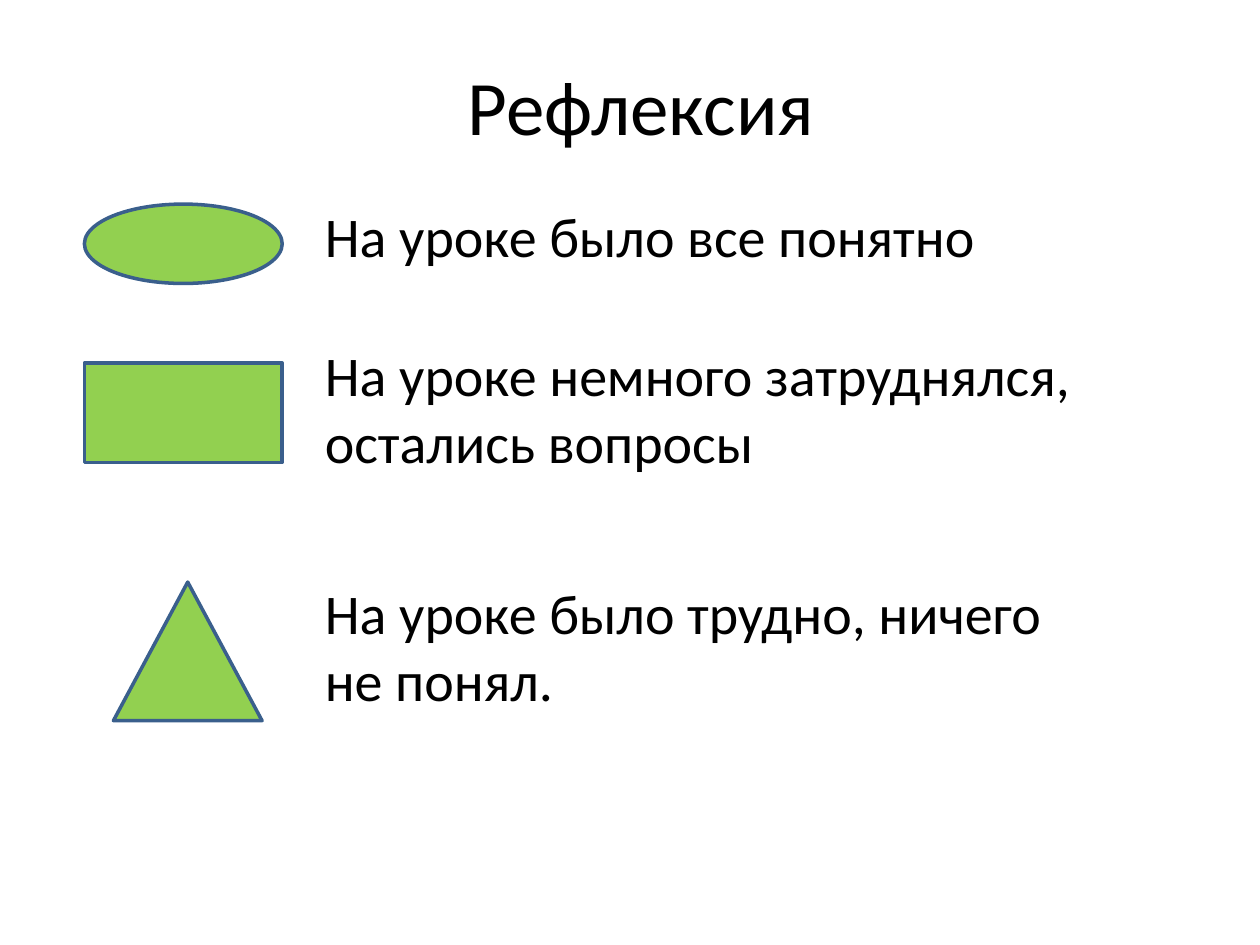
from dataclasses import dataclass

from pptx import Presentation
from pptx.dml.color import RGBColor
from pptx.enum.shapes import MSO_SHAPE as Preset
from pptx.enum.text import MSO_ANCHOR as Anchor, PP_ALIGN as Align
from pptx.slide import Slide
from pptx.text.text import TextFrame
from pptx.util import Inches, Pt

BLACK, GREEN, BLUE = "000000", "92D050", "3A5F8C"
ANSWER_LEFT, ANSWER_WIDTH = 2.48, 6.14


@dataclass(frozen=True)
class Answer:
    """A mark and the answer it stands for; boxes are in inches."""
    mark: Preset
    mark_box: tuple[float, float, float, float]
    wording: str
    top: float
    height: float


ANSWERS = [
    Answer(Preset.OVAL, (0.67, 1.62, 1.57, 0.63),
           "На уроке было все понятно", 1.55, 0.64),
    Answer(Preset.RECTANGLE, (0.67, 2.88, 1.57, 0.79),
           "На уроке немного затруднялся, остались вопросы", 2.65, 1.18),
    Answer(Preset.ISOSCELES_TRIANGLE, (0.9, 4.62, 1.18, 1.1),
           "На уроке было трудно, ничего не понял.", 4.54, 1.18),
]


def color(value: str) -> RGBColor:
    return RGBColor.from_string(value)


def write(frame: TextFrame, wording: str, *, size: float = 32,
          align: Align = Align.LEFT, anchor: Anchor = Anchor.TOP) -> None:
    frame.word_wrap = True
    frame.vertical_anchor = anchor
    paragraph = frame.paragraphs[0]
    paragraph.alignment = align
    run = paragraph.add_run()
    run.text = wording
    run.font.name = "Calibri"
    run.font.size = Pt(size)
    run.font.color.rgb = color(BLACK)


def add_title(slide: Slide, wording: str) -> None:
    title = slide.shapes.title
    title.left, title.top = Inches(0.59), Inches(0.21)
    title.width, title.height = Inches(9), Inches(1.25)
    write(title.text_frame, wording, size=44, align=Align.CENTER, anchor=Anchor.MIDDLE)


def add_answer(slide: Slide, answer: Answer) -> None:
    label = slide.shapes.add_textbox(Inches(ANSWER_LEFT), Inches(answer.top),
                                     Inches(ANSWER_WIDTH), Inches(answer.height))
    write(label.text_frame, answer.wording)

    mark = slide.shapes.add_shape(answer.mark, *map(Inches, answer.mark_box))
    mark.shadow.inherit = False
    mark.fill.solid()
    mark.fill.fore_color.rgb = color(GREEN)
    mark.line.color.rgb = color(BLUE)
    mark.line.width = Pt(2)


def main() -> None:
    deck = Presentation()
    deck.slide_width, deck.slide_height = Inches(10), Inches(7.5)
    slide = deck.slides.add_slide(deck.slide_layouts[5])
    add_title(slide, "Рефлексия")
    for answer in ANSWERS:
        add_answer(slide, answer)
    deck.save("out.pptx")


if __name__ == "__main__":
    main()
